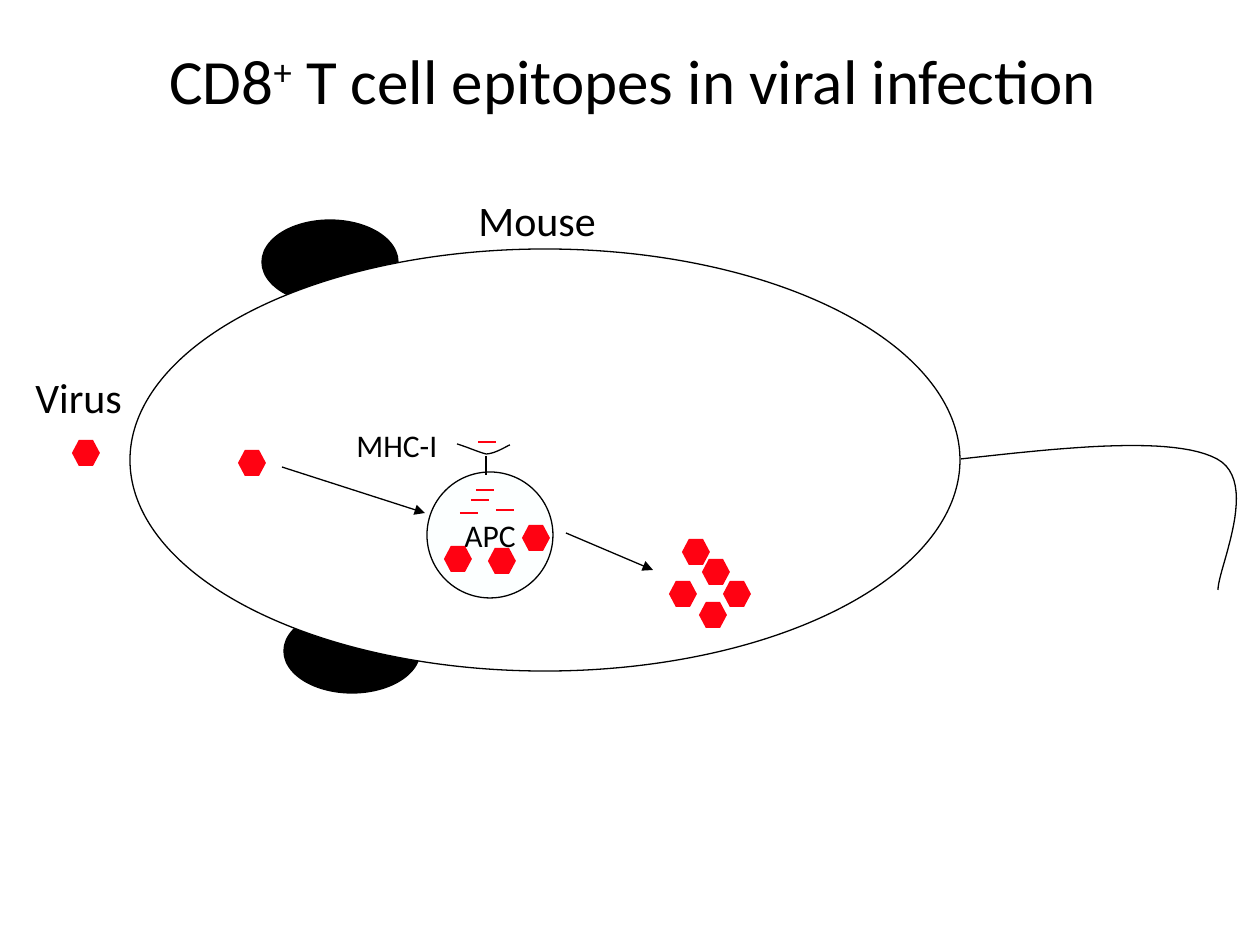
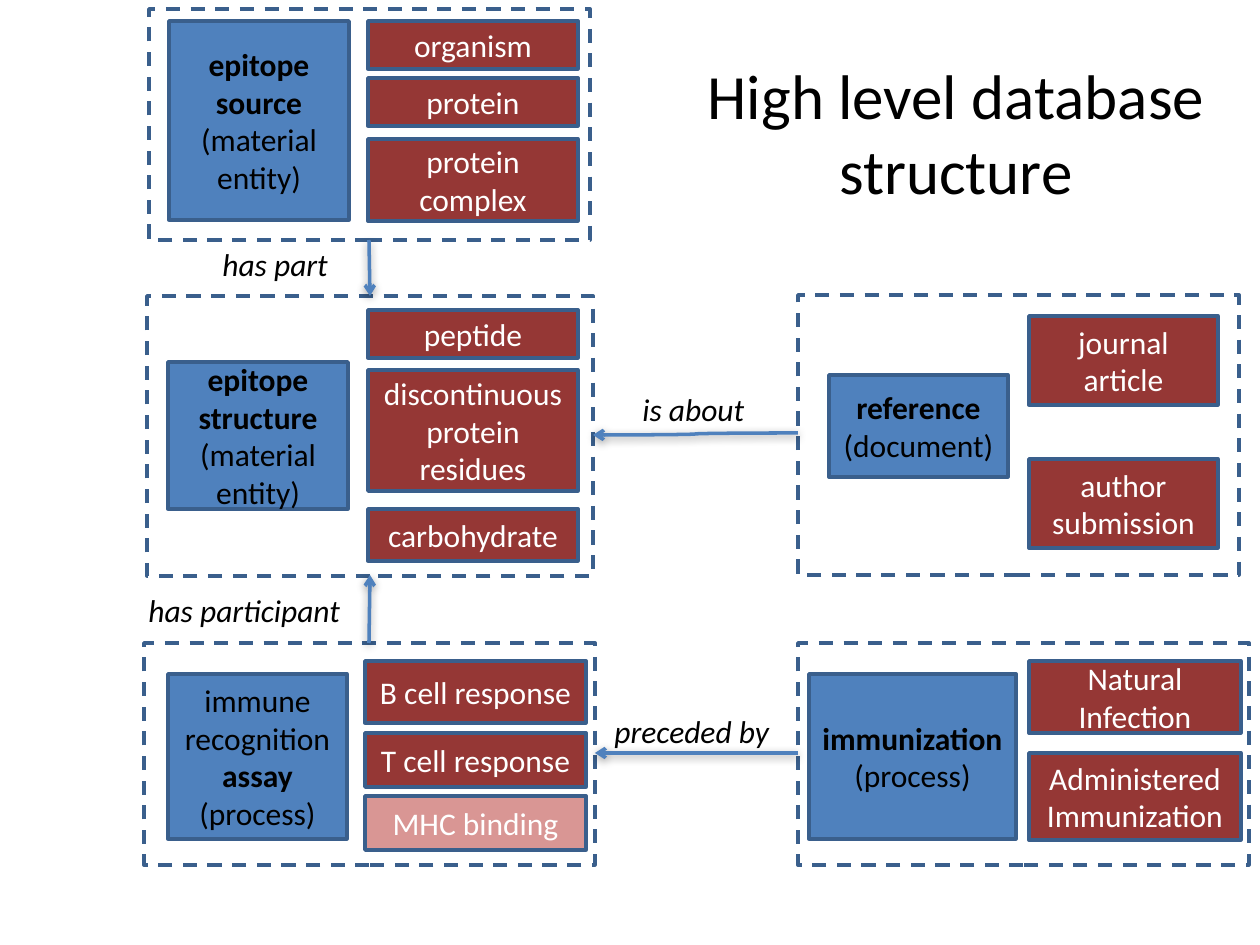
from lxml import etree
from pptx import Presentation
from pptx.dml.color import RGBColor
from pptx.enum.dml import MSO_LINE
from pptx.enum.shapes import MSO_CONNECTOR as LINK, MSO_SHAPE as SHAPE
from pptx.enum.text import MSO_ANCHOR as ANCHOR, PP_ALIGN as ALIGN
from pptx.oxml.ns import qn
from pptx.util import Pt

# Shared look
EMU_PER_PX = 914400 / 126
FONT = "Calibri"
BLACK, WHITE = "000000", "FFFFFF"
RED, CELL = "FF0212", "FCFFFF"
BLUE, EDGE = "4F81BD", "3A5F8C"
BRICK, PINK = "953735", "D99694"
TITLE_SIZE, LABEL_SIZE, NAME_SIZE = 36, 18, 24
THIN, MEDIUM, THICK = 0.75, 1.5, 2

# Runs are (text, style); style letters: b bold, i italic, ^ superscript
# Slide 1: infected mouse, boxes as left, top, width, height
MOUSE_TITLE = [("CD8", ""), ("+", "^"), (" T cell epitopes in viral infection", "")]
MOUSE_TITLE_BOX = (-13, 0, 1292, 158)
EARS = [(284, 609, 136, 84), (262, 220, 136, 84)]
BODY = (130, 249, 830, 422)
TAIL = [(961, 459), (1068, 447), (1174, 436), (1217, 459),
        (1260, 482), (1218, 568), (1218, 590)]
APC = (427, 472, 126, 126)
VIRUS_SIZE = (28, 26)
VIRUSES = [(72, 440), (238, 450),
           (522, 525), (444, 546), (488, 548),
           (682, 539), (702, 559), (669, 581), (723, 581), (699, 602)]
PEPTIDE_LENGTH = 18
PEPTIDES = [(478, 442), (460, 513), (471, 500), (476, 490), (496, 510)]
MHC_STEM = [(486, 456), (486, 475)]
MHC_CUP = [(457, 444), (467, 447), (478, 452), (486, 454),
           (495, 454), (507, 446), (510, 445)]
VIRUS_PATHS = [[(282, 467), (425, 513)], [(566, 533), (653, 570)]]
MOUSE_LABELS = [
    ("Mouse", NAME_SIZE, (466, 188, 210, 63)),
    ("Virus", NAME_SIZE, (23, 365, 127, 63)),
    ("MHC-I", LABEL_SIZE, (344, 420, 145, 50)),
]

# Slide 2: each group has a frame, a main box and a column of parts
DATABASE_TITLE = [("High level database structure", "")]
DATABASE_TITLE_BOX = (662, 53, 588, 158)
GROUPS = [
    dict(frame=(149, 9, 441, 231), main=(169, 21, 180, 199),
         name=[[("epitope source ", "b"), ("(material entity)", "")]],
         column=(368, 210),
         parts=[("organism", 21, 48, BRICK), ("protein", 78, 48, BRICK),
                ("protein complex", 139, 82, BRICK)]),
    dict(frame=(147, 296, 446, 280), main=(168, 362, 180, 147),
         name=[[("epitope structure", "b")], [("(material entity)", "")]],
         column=(368, 210),
         parts=[("peptide", 310, 48, BRICK),
                ("discontinuous protein residues", 370, 121, BRICK),
                ("carbohydrate", 509, 52, BRICK)]),
    dict(frame=(144, 643, 451, 222), main=(168, 674, 179, 165),
         name=[[("immune recognition ", ""), ("assay ", "b"), ("(process)", "")]],
         column=(365, 221),
         parts=[("B cell response", 661, 62, BRICK),
                ("T cell response", 733, 54, BRICK),
                ("MHC binding", 796, 54, PINK)]),
    dict(frame=(798, 295, 441, 280), main=(829, 375, 179, 102),
         name=[[("reference ", "b"), ("(document)", "")]],
         column=(1029, 189),
         parts=[("journal article", 316, 89, BRICK),
                ("author submission", 459, 89, BRICK)]),
    dict(frame=(798, 643, 451, 222), main=(809, 674, 207, 165),
         name=[[("immunization", "b"), (" (process)", "")]],
         column=(1029, 212),
         parts=[("Natural Infection", 661, 72, BRICK),
                ("Administered Immunization", 753, 87, BRICK)]),
]
RELATIONS = [
    ("has part", (210, 239, 147, 50), [(369, 240), (370, 296)], LINK.STRAIGHT),
    ("is about", (630, 384, 158, 50), [(798, 433), (593, 435)], LINK.CURVE),
    ("has participant", (136, 585, 256, 50), [(369, 643), (370, 575)], LINK.STRAIGHT),
    ("preceded by", (602, 706, 208, 50), [(798, 753), (595, 753)], LINK.CURVE),
]


def px(*lengths):
    return [round(length * EMU_PER_PX) for length in lengths]


def color(code):
    return RGBColor.from_string(code)


def write(shape, paragraphs, size, ink=BLACK, align=ALIGN.LEFT, anchor=ANCHOR.TOP, wrap=True):
    frame = shape.text_frame
    frame.word_wrap = wrap
    frame.vertical_anchor = anchor
    for index, runs in enumerate(paragraphs):
        para = frame.paragraphs[0] if index == 0 else frame.add_paragraph()
        para.alignment = align
        for text, style in runs:
            span = para.add_run()
            span.text = text
            font = span.font
            font.name, font.size = FONT, Pt(size)
            font.color.rgb = color(ink)
            font.bold, font.italic = "b" in style, "i" in style
            if "^" in style:
                span._r.get_or_add_rPr().set("baseline", "30000")


def add_title(page, runs, box):
    title = page.shapes.title
    title.left, title.top, title.width, title.height = px(*box)
    write(title, [runs], TITLE_SIZE, align=ALIGN.CENTER, anchor=ANCHOR.MIDDLE)


def add_label(page, text, box, size=LABEL_SIZE, style=""):
    write(page.shapes.add_textbox(*px(*box)), [[(text, style)]], size)


def set_line(line, code, width):
    line.color.rgb = color(code)
    line.width = Pt(width)


def add_figure(page, kind, box, fill=None, edge=None, width=THIN):
    shape = page.shapes.add_shape(kind, *px(*box))
    shape.shadow.inherit = False
    if fill:
        shape.fill.solid()
        shape.fill.fore_color.rgb = color(fill)
    else:
        shape.fill.background()
    if edge:
        set_line(shape.line, edge, width)
    else:
        shape.line.fill.background()
    return shape


def add_line(page, ends, code, width, head=None, kind=LINK.STRAIGHT, shadow=False):
    (x1, y1), (x2, y2) = ends
    link = page.shapes.add_connector(kind, *px(x1, y1, x2, y2))
    set_line(link.line, code, width)
    if head:
        etree.SubElement(link.line._get_or_add_ln(), qn("a:tailEnd"), type=head)
    effects = etree.SubElement(link._element.spPr, qn("a:effectLst"))
    if shadow:
        outer = etree.SubElement(effects, qn("a:outerShdw"), blurRad="63500",
                                 dist="20000", dir="5400000", rotWithShape="0")
        tint = etree.SubElement(outer, qn("a:srgbClr"), val=BLACK)
        etree.SubElement(tint, qn("a:alpha"), val="38000")


def add_curve(page, knots, steps=24):
    """Trace joined cubic Bezier curves: a start, then three points for each curve."""
    trace = []
    for first in range(0, len(knots) - 1, 3):
        for step in range(1, steps + 1):
            t = step / steps
            weights = ((1 - t) ** 3, 3 * t * (1 - t) ** 2, 3 * t * t * (1 - t), t ** 3)
            curve = knots[first:first + 4]
            trace.append(px(*(sum(w * knot[axis] for w, knot in zip(weights, curve))
                              for axis in (0, 1))))
    builder = page.shapes.build_freeform(*px(*knots[0]))
    builder.add_line_segments(trace, close=False)
    shape = builder.convert_to_shape()
    shape.shadow.inherit = False
    shape.fill.background()
    set_line(shape.line, BLACK, THIN)


def build_mouse(page):
    add_title(page, MOUSE_TITLE, MOUSE_TITLE_BOX)
    # Mouse
    for ear in EARS:
        add_figure(page, SHAPE.OVAL, ear, BLACK, BLACK)
    add_figure(page, SHAPE.OVAL, BODY, WHITE, BLACK)
    add_curve(page, TAIL)
    # Cell, viruses and peptides
    cell = add_figure(page, SHAPE.OVAL, APC, CELL, BLACK)
    write(cell, [[("APC", "")]], LABEL_SIZE, align=ALIGN.CENTER,
          anchor=ANCHOR.MIDDLE, wrap=False)
    for spot in VIRUSES:
        virus = add_figure(page, SHAPE.HEXAGON, spot + VIRUS_SIZE, RED)
        virus.adjustments[0] = 0.264
    for x, y in PEPTIDES:
        add_line(page, [(x, y), (x + PEPTIDE_LENGTH, y)], RED, MEDIUM)
    # MHC receptor, routes and labels
    add_line(page, MHC_STEM, BLACK, THIN)
    add_curve(page, MHC_CUP)
    for ends in VIRUS_PATHS:
        add_line(page, ends, BLACK, THIN, head="triangle")
    for text, size, box in MOUSE_LABELS:
        add_label(page, text, box, size)


def add_block(page, box, paragraphs, fill, ink):
    block = add_figure(page, SHAPE.RECTANGLE, box, fill, EDGE, THICK)
    write(block, paragraphs, LABEL_SIZE, ink, ALIGN.CENTER, ANCHOR.MIDDLE)


def build_database(page):
    add_title(page, DATABASE_TITLE, DATABASE_TITLE_BOX)
    # Groups
    for group in GROUPS:
        frame = add_figure(page, SHAPE.RECTANGLE, group["frame"], edge=EDGE, width=THICK)
        frame.line.dash_style = MSO_LINE.DASH
        add_block(page, group["main"], group["name"], BLUE, BLACK)
        left, width = group["column"]
        for text, top, height, fill in group["parts"]:
            add_block(page, (left, top, width, height), [[(text, "")]], fill, WHITE)
    # Relations
    for text, box, ends, kind in RELATIONS:
        add_line(page, ends, BLUE, THICK, head="arrow", kind=kind, shadow=True)
        add_label(page, text, box, style="i")


def main():
    deck = Presentation()
    deck.slide_width, deck.slide_height = px(1260, 945)
    title_only = deck.slide_layouts[5]
    for build in (build_mouse, build_database):
        build(deck.slides.add_slide(title_only))
    deck.save("out.pptx")


if __name__ == "__main__":
    main()
